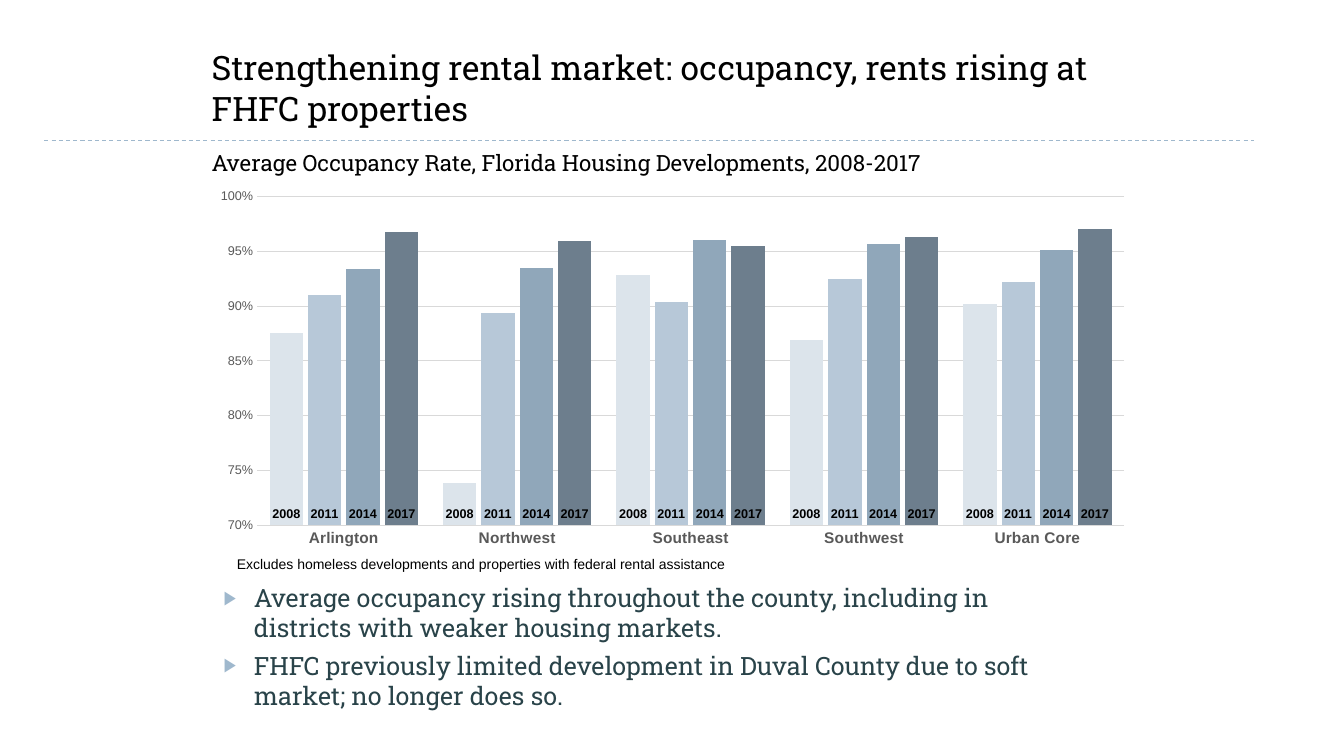
from dataclasses import dataclass

from lxml import etree
from pptx import Presentation
from pptx.chart.data import CategoryChartData
from pptx.dml.color import RGBColor
from pptx.enum.chart import XL_CHART_TYPE, XL_LABEL_POSITION, XL_TICK_MARK
from pptx.enum.dml import MSO_LINE
from pptx.enum.shapes import MSO_CONNECTOR
from pptx.enum.text import MSO_ANCHOR, MSO_AUTO_SIZE, PP_ALIGN
from pptx.oxml.ns import qn
from pptx.util import Inches, Pt


@dataclass(frozen=True)
class Theme:
    heading_font: str = "Roboto Slab"
    body_font: str = "Arial"
    black: str = "000000"
    body: str = "294349"
    accent: str = "9FB8CD"
    axis_text: str = "595959"
    grid: str = "D9D9D9"
    bars: tuple = ("DCE4EB", "B7C8D8", "90A7BA", "6D7E8D")
    title_size: int = 24
    bullet_size: int = 18
    subtitle_size: int = 16
    category_size: int = 11
    note_size: int = 10
    label_size: int = 9


def rgb(value):
    return RGBColor.from_string(value)


def child(parent, tag, **attrs):
    el = etree.SubElement(parent, qn(tag))
    for name, value in attrs.items():
        el.set(name, str(value))
    return el


class SlideBuilder:
    def __init__(self, prs, theme):
        self.theme = theme
        self.slide = prs.slides.add_slide(prs.slide_layouts[5])

    def style(self, font, size, color, name, bold=False):
        font.size = Pt(size)
        font.color.rgb = rgb(color)
        font.name = name
        font.bold = bold

    def run(self, p, text, size, color, name):
        r = p.add_run()
        r.text = text
        self.style(r.font, size, color, name)

    def title(self, text, box):
        sp = self.slide.shapes.title
        sp.left, sp.top, sp.width, sp.height = map(Inches, box)
        tf = sp.text_frame
        tf.auto_size = MSO_AUTO_SIZE.NONE
        tf.word_wrap = True
        tf.vertical_anchor = MSO_ANCHOR.BOTTOM
        p = tf.paragraphs[0]
        p.alignment = PP_ALIGN.LEFT
        self.run(p, text, self.theme.title_size, self.theme.black, self.theme.heading_font)

    def rule(self, x1, x2, y):
        line = self.slide.shapes.add_connector(
            MSO_CONNECTOR.STRAIGHT, Inches(x1), Inches(y), Inches(x2), Inches(y))
        line.line.color.rgb = rgb(self.theme.accent)
        line.line.width = Pt(0.75)
        line.line.dash_style = MSO_LINE.DASH
        child(line._element.spPr, "a:effectLst")

    def text(self, text, box, size, name, wrap=True):
        tf = self.slide.shapes.add_textbox(*map(Inches, box)).text_frame
        tf.word_wrap = wrap
        self.run(tf.paragraphs[0], text, size, self.theme.black, name)

    def bullets(self, items, box):
        t = self.theme
        tf = self.slide.shapes.add_textbox(*map(Inches, box)).text_frame
        tf.word_wrap = True
        for i, item in enumerate(items):
            p = tf.add_paragraph() if i else tf.paragraphs[0]
            if i:
                p.space_before = Pt(5)
            pPr = p._p.get_or_add_pPr()
            pPr.set("marL", str(Inches(0.6)))
            pPr.set("indent", str(Inches(-0.3)))
            child(child(pPr, "a:buClr"), "a:srgbClr", val=t.accent)
            child(pPr, "a:buSzPct", val=76000)
            child(pPr, "a:buFont", typeface=t.body_font)
            child(pPr, "a:buChar", char="▶")
            self.run(p, item, t.bullet_size, t.body, t.heading_font)

    def column_chart(self, categories, series, box, plot_box):
        t = self.theme
        data = CategoryChartData(number_format="0%")
        data.categories = categories
        for name, values in series.items():
            data.add_series(name, values)
        chart = self.slide.shapes.add_chart(
            XL_CHART_TYPE.COLUMN_CLUSTERED, *map(Inches, box), data).chart
        chart.has_legend = False
        chart.has_title = False
        self.style(chart.font, t.note_size, t.black, t.body_font)

        plot = chart.plots[0]
        plot.gap_width = 75
        plot.overlap = -15
        plot.vary_by_categories = False
        for ser, color in zip(plot.series, t.bars):
            ser.format.fill.solid()
            ser.format.fill.fore_color.rgb = rgb(color)
            labels = ser.data_labels
            labels.show_value = False
            labels.show_series_name = True
            labels.position = XL_LABEL_POSITION.INSIDE_BASE
            self.style(labels.font, t.label_size, t.black, t.body_font, True)

        cat, val = chart.category_axis, chart.value_axis
        for axis in (cat, val):
            axis.major_tick_mark = axis.minor_tick_mark = XL_TICK_MARK.NONE
        self.style(cat.tick_labels.font, t.category_size, t.axis_text, t.body_font, True)
        self.style(val.tick_labels.font, t.label_size, t.axis_text, t.body_font)
        val.minimum_scale, val.maximum_scale, val.major_unit = 0.7, 1, 0.05
        val.tick_labels.number_format = "0%"
        val.tick_labels.number_format_is_linked = False
        val.format.line.fill.background()
        val.has_major_gridlines = True
        for line in (cat.format.line, val.major_gridlines.format.line):
            line.color.rgb = rgb(t.grid)
            line.width = Pt(0.75)
        self.place_plot(chart, box, plot_box)

    def place_plot(self, chart, box, plot_box):
        left, top, width, height = box
        x, y, w, h = plot_box
        area = chart._chartSpace.chart.plotArea
        for old in area.findall(qn("c:layout")):
            area.remove(old)
        layout = etree.Element(qn("c:layout"))
        area.insert(0, layout)
        manual = child(layout, "c:manualLayout")
        child(manual, "c:layoutTarget", val="inner")
        child(manual, "c:xMode", val="edge")
        child(manual, "c:yMode", val="edge")
        child(manual, "c:x", val=(x - left) / width)
        child(manual, "c:y", val=(y - top) / height)
        child(manual, "c:w", val=w / width)
        child(manual, "c:h", val=h / height)


def main():
    theme = Theme()
    prs = Presentation()
    prs.slide_width, prs.slide_height = Inches(13.33), Inches(7.5)
    s = SlideBuilder(prs, theme)
    s.rule(0.44, 12.44, 1.39)
    s.title("Strengthening rental market: occupancy, rents rising at FHFC properties",
            (2, 0.48, 9, 0.84))
    s.text("Average Occupancy Rate, Florida Housing Developments, 2008-2017",
           (2, 1.43, 8.56, 0.64), theme.subtitle_size, theme.heading_font)
    s.bullets((
        "Average occupancy rising throughout the county, including in districts "
        "with weaker housing markets.",
        "FHFC previously limited development in Duval County due to soft market; "
        "no longer does so.",
    ), (1.82, 5.73, 8.92, 1.5))
    s.column_chart(
        ("Arlington", "Northwest", "Southeast", "Southwest", "Urban Core"),
        {
            "2008": (0.875, 0.738, 0.928, 0.869, 0.902),
            "2011": (0.91, 0.894, 0.904, 0.925, 0.922),
            "2014": (0.934, 0.935, 0.96, 0.957, 0.951),
            "2017": (0.968, 0.959, 0.955, 0.963, 0.97),
        },
        (2, 1.8, 9.33, 3.7), (2.55, 1.95, 8.6, 3.26))
    s.text("Excludes homeless developments and properties with federal rental assistance",
           (2.25, 5.46, 5.08, 0.27), theme.note_size, theme.body_font, wrap=False)
    prs.save("out.pptx")


if __name__ == "__main__":
    main()
